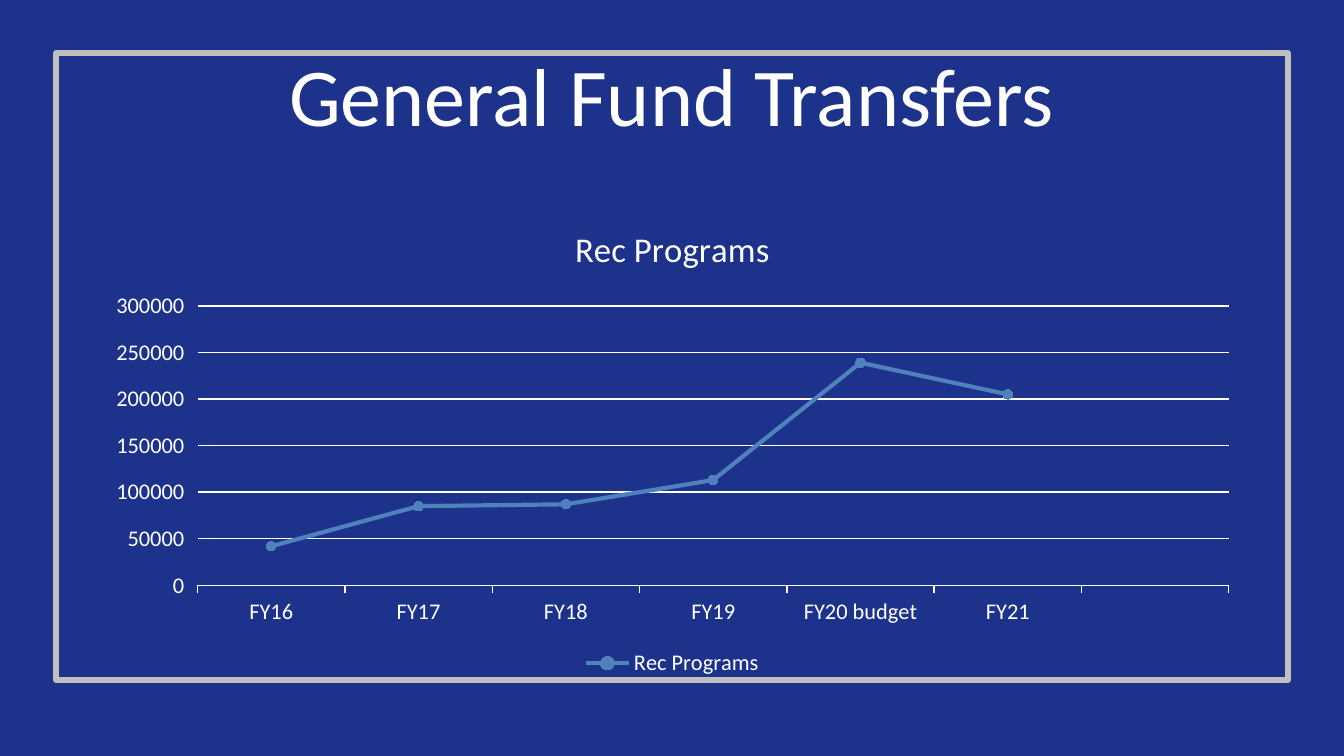
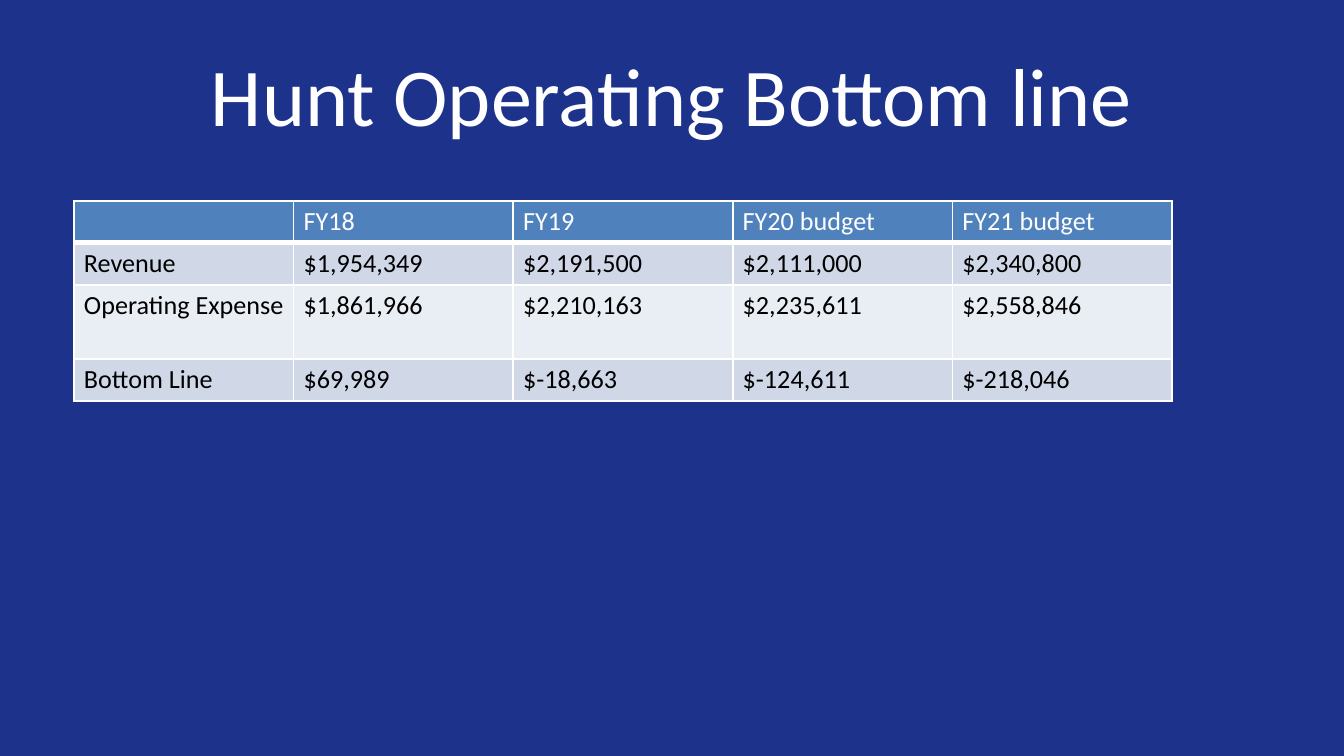
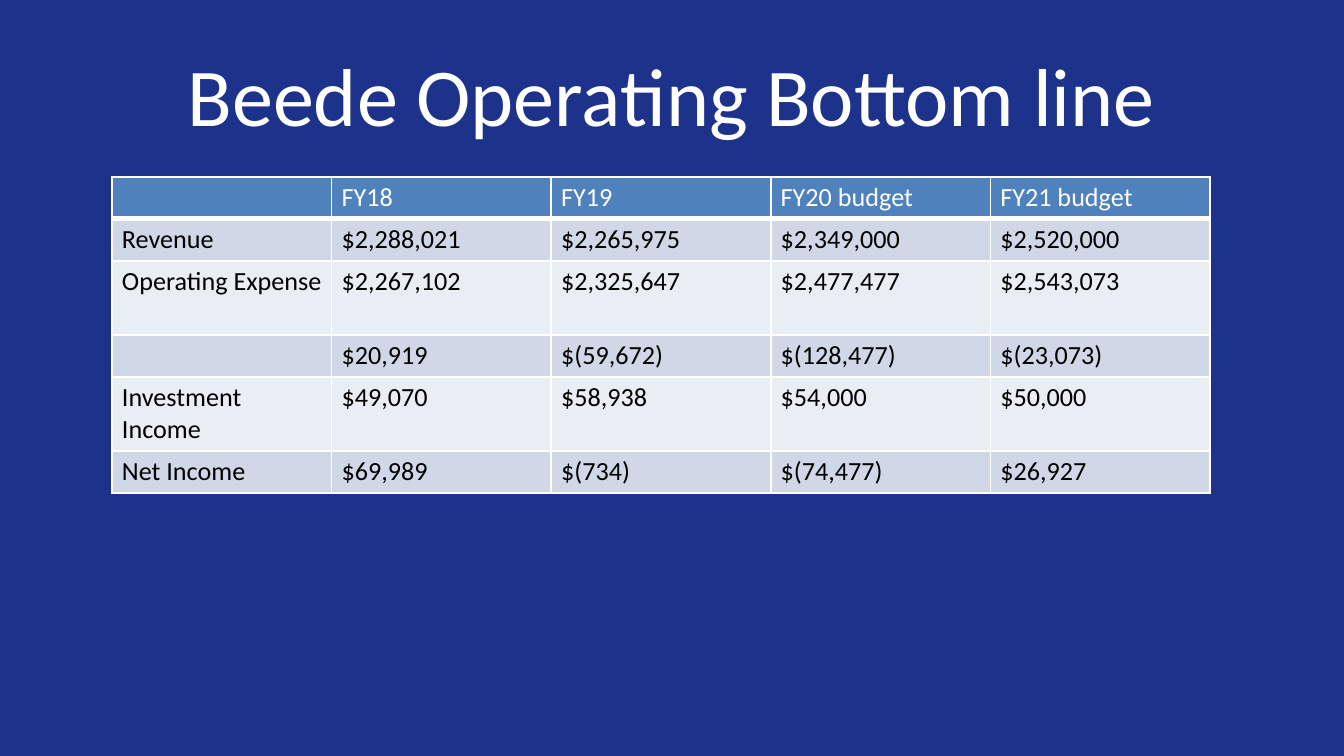
import lxml.etree
import pptx
import pptx.chart.data
import pptx.dml.color
import pptx.enum.chart
import pptx.enum.shapes
import pptx.enum.text
import pptx.oxml.ns
import pptx.util

SLIDE_WIDTH, SLIDE_HEIGHT = 1344, 756
EMU_PER_PX = 9144000 / SLIDE_WIDTH
FONT = "Calibri"
NAVY = pptx.dml.color.RGBColor(0x1D, 0x32, 0x8B)
WHITE = pptx.dml.color.RGBColor(0xFF, 0xFF, 0xFF)
BLACK = pptx.dml.color.RGBColor(0x00, 0x00, 0x00)
SILVER = pptx.dml.color.RGBColor(0xBF, 0xBF, 0xBF)
BLUE = pptx.dml.color.RGBColor(0x4F, 0x81, 0xBD)
RED = pptx.dml.color.RGBColor(0xFF, 0x00, 0x00)
BANDS = [
    pptx.dml.color.RGBColor(0xD0, 0xD8, 0xE8),
    pptx.dml.color.RGBColor(0xE9, 0xED, 0xF4),
]
ROW_HEIGHT, WRAPPED_ROW_HEIGHT = 42, 74
LONGEST_ONE_LINE_LABEL = 12
YEARS = ["", "FY18", "FY19", "FY20 budget", "FY21 budget"]


def px(length):
    return pptx.util.Emu(round(length * EMU_PER_PX))


def style_font(font, size, color=WHITE):
    font.name = FONT
    font.size = pptx.util.Pt(size)
    font.bold = False
    font.color.rgb = color


def write(frame, text, size=14, color=WHITE, align=pptx.enum.text.PP_ALIGN.LEFT):
    paragraph = frame.paragraphs[0]
    paragraph.alignment = align
    if text:
        run = paragraph.add_run()
        run.text = text
        style_font(run.font, size, color)
    else:
        lxml.etree.SubElement(
            paragraph._p, pptx.oxml.ns.qn("a:endParaRPr"), sz=str(size * 100)
        )


def add_borders(cell, bottom):
    properties = cell._tc.get_or_add_tcPr()
    for side, width in (("L", 1), ("R", 1), ("T", 1), ("B", bottom)):
        line = lxml.etree.SubElement(
            properties,
            pptx.oxml.ns.qn("a:ln" + side),
            w=str(pptx.util.Pt(width)),
        )
        fill = lxml.etree.SubElement(line, pptx.oxml.ns.qn("a:solidFill"))
        lxml.etree.SubElement(fill, pptx.oxml.ns.qn("a:srgbClr"), val=str(WHITE))


class Deck:
    def __init__(self):
        self.presentation = pptx.Presentation()
        self.presentation.slide_width = px(SLIDE_WIDTH)
        self.presentation.slide_height = px(SLIDE_HEIGHT)
        background = self.presentation.slide_master.background.fill
        background.solid()
        background.fore_color.rgb = NAVY
        self.slide = None

    def start_slide(self):
        self.slide = self.presentation.slides.add_slide(
            self.presentation.slide_layouts[6]
        )

    def title(self, text):
        box = self.slide.shapes.add_textbox(px(67), px(31), px(1210), px(126))
        box.text_frame.word_wrap = True
        box.text_frame.vertical_anchor = pptx.enum.text.MSO_ANCHOR.MIDDLE
        write(box.text_frame, text, size=44, align=pptx.enum.text.PP_ALIGN.CENTER)

    def frame(self, left, top, width, height):
        outline = self.slide.shapes.add_shape(
            pptx.enum.shapes.MSO_SHAPE.RECTANGLE,
            px(left), px(top), px(width), px(height),
        )
        outline.shadow.inherit = False
        outline.fill.background()
        outline.line.color.rgb = SILVER
        outline.line.width = pptx.util.Pt(3)

    def line_chart(self, left, top, width, height, name, years, amounts):
        data = pptx.chart.data.CategoryChartData()
        data.categories = years
        data.add_series(name, amounts)
        chart = self.slide.shapes.add_chart(
            pptx.enum.chart.XL_CHART_TYPE.LINE_MARKERS,
            px(left), px(top), px(width), px(height), data,
        ).chart
        style_font(chart.font, 10)

        chart.has_title = True
        write(chart.chart_title.text_frame, name, size=18.6,
              align=pptx.enum.text.PP_ALIGN.CENTER)
        chart.chart_title.include_in_layout = False

        chart.has_legend = True
        chart.legend.position = pptx.enum.chart.XL_LEGEND_POSITION.BOTTOM
        chart.legend.include_in_layout = False
        style_font(chart.legend.font, 12)

        for axis in (chart.category_axis, chart.value_axis):
            axis.major_tick_mark = pptx.enum.chart.XL_TICK_MARK.OUTSIDE
            style_font(axis.tick_labels.font, 12)
        chart.value_axis.format.line.fill.background()
        chart.value_axis.has_major_gridlines = True
        for line in (chart.category_axis.format.line,
                     chart.value_axis.major_gridlines.format.line):
            line.color.rgb = WHITE
            line.width = pptx.util.Pt(0.75)

        chart.plots[0].vary_by_categories = False
        trend = chart.plots[0].series[0]
        trend.smooth = False
        trend.format.line.color.rgb = BLUE
        trend.format.line.width = pptx.util.Pt(2.25)
        self.marker(trend.marker, BLUE)
        for index, amount in enumerate(amounts):
            if amount is not None:
                self.marker(trend.points[index].marker, RED)

    def marker(self, marker, color):
        marker.style = pptx.enum.chart.XL_MARKER_STYLE.CIRCLE
        marker.size = 5
        marker.format.fill.solid()
        marker.format.fill.fore_color.rgb = color
        marker.format.line.color.rgb = color

    def table(self, left, top, width, rows):
        heights = [
            WRAPPED_ROW_HEIGHT if len(row[0]) > LONGEST_ONE_LINE_LABEL else ROW_HEIGHT
            for row in rows
        ]
        table = self.slide.shapes.add_table(
            len(rows), len(rows[0]), px(left), px(top), px(width), px(sum(heights))
        ).table
        table.horz_banding = False
        for index, (row, height) in enumerate(zip(rows, heights)):
            table.rows[index].height = px(height)
            header = index == 0
            for column, text in enumerate(row):
                cell = table.cell(index, column)
                cell.margin_left = cell.margin_right = px(10)
                cell.margin_top = cell.margin_bottom = px(5)
                add_borders(cell, bottom=3 if header else 1)
                cell.fill.solid()
                cell.fill.fore_color.rgb = BLUE if header else BANDS[(index - 1) % 2]
                write(cell.text_frame, text, color=WHITE if header else BLACK)


def main():
    deck = Deck()

    deck.start_slide()
    deck.frame(56, 53, 1232, 627)
    deck.title("General Fund Transfers")
    deck.line_chart(
        93, 202, 1159, 480, "Rec Programs",
        ["FY16", "FY17", "FY18", "FY19", "FY20 budget", "FY21", ""],
        [42000, 85000, 87000, 113000, 239000, 205000, None],
    )

    deck.start_slide()
    deck.title("Hunt Operating Bottom line")
    deck.table(74, 201, 1098, [
        YEARS,
        ["Revenue", "$1,954,349", "$2,191,500", "$2,111,000", "$2,340,800"],
        ["Operating Expense", "$1,861,966", "$2,210,163", "$2,235,611", "$2,558,846"],
        ["Bottom Line", "$69,989", "$-18,663", "$-124,611", "$-218,046"],
    ])

    deck.start_slide()
    deck.title("Beede Operating Bottom line")
    deck.table(112, 177, 1098, [
        YEARS,
        ["Revenue", "$2,288,021", "$2,265,975", "$2,349,000", "$2,520,000"],
        ["Operating Expense", "$2,267,102", "$2,325,647", "$2,477,477", "$2,543,073"],
        ["", "$20,919", "$(59,672)", "$(128,477)", "$(23,073)"],
        ["Investment Income", "$49,070", "$58,938", "$54,000", "$50,000"],
        ["Net Income", "$69,989", "$(734)", "$(74,477)", "$26,927"],
    ])

    deck.presentation.save("out.pptx")


if __name__ == "__main__":
    main()
